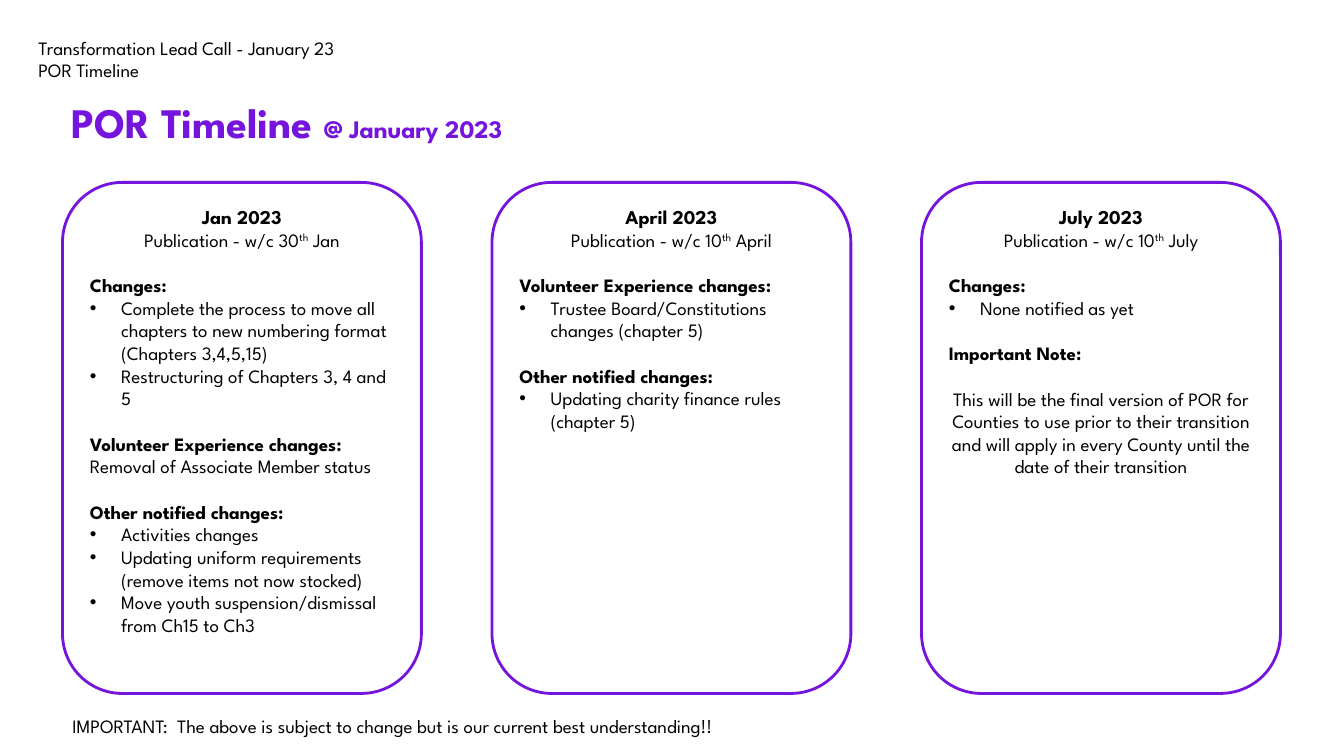
from dataclasses import dataclass

from lxml import etree
from pptx import Presentation
from pptx import util as u
from pptx.dml.color import RGBColor
from pptx.enum import shapes, text
from pptx.oxml.ns import qn


@dataclass(frozen=True)
class Theme:
    """Colours, font and type sizes of the slide."""
    font: str = "League Spartan"
    purple: RGBColor = RGBColor(0x74, 0x14, 0xDC)
    black: RGBColor = RGBColor(0, 0, 0)
    title: float = 30
    subtitle: float = 18
    heading: float = 14
    body: float = 13.5
    section_gap: float = 16.2
    outline: float = 2
    bullet_indent: float = 0.31


THEME = Theme()
SLIDE_WIDTH, SLIDE_HEIGHT = 13.33, 7.5
CARD_LEFT, CARD_TOP, CARD_PITCH = 0.62, 1.81, 4.26
CARD_WIDTH, CARD_HEIGHT = 3.56, 5.07

CARDS = [
    ("Jan 2023", "30", "Jan", [
        ("section", "Changes:"),
        ("bullet", "Complete the process to move all chapters to new numbering format (Chapters 3,4,5,15)"),
        ("bullet", "Restructuring of Chapters 3, 4 and 5"),
        ("section", "Volunteer Experience changes:"),
        ("plain", "Removal of Associate Member status"),
        ("section", "Other notified changes:"),
        ("bullet", "Activities changes"),
        ("bullet", "Updating uniform requirements (remove items not now stocked)"),
        ("bullet", "Move youth suspension/dismissal from Ch15 to Ch3"),
    ]),
    ("April 2023", "10", "April", [
        ("section", "Volunteer Experience changes:"),
        ("bullet", "Trustee Board/Constitutions changes (chapter 5)"),
        ("section", "Other notified changes:"),
        ("bullet", "Updating charity finance rules (chapter 5)"),
    ]),
    ("July 2023", "10", "July", [
        ("section", "Changes:"),
        ("bullet", "None notified as yet"),
        ("section", "Important Note:"),
        ("note", "This will be the final version of POR for Counties to use prior to their "
                 "transition and will apply in every County until the date of their transition"),
    ]),
]


def add_run(paragraph, words, size=THEME.body, bold=False, color=THEME.black, raised=False):
    """Add one styled run, optionally as superscript."""
    run = paragraph.add_run()
    run.text = words
    run.font.name = THEME.font
    run.font.size = u.Pt(size)
    run.font.bold = bold
    run.font.color.rgb = color
    if raised:
        run._r.get_or_add_rPr().set("baseline", "30000")


def add_bullet(paragraph):
    """Give a paragraph a hanging round bullet."""
    properties = paragraph._p.get_or_add_pPr()
    indent = u.Inches(THEME.bullet_indent)
    properties.set("marL", str(indent))
    properties.set("indent", str(-indent))
    etree.SubElement(properties, qn("a:buFont"), typeface="Arial")
    etree.SubElement(properties, qn("a:buChar"), char="•")


def add_line(slide, box, runs, inset=True):
    """Place a one-paragraph text box, with or without inner margins."""
    shape = slide.shapes.add_textbox(*map(u.Inches, box))
    frame = shape.text_frame
    frame.word_wrap = True
    if not inset:
        frame.margin_left = frame.margin_right = frame.margin_top = frame.margin_bottom = 0
    for words, style in runs:
        add_run(frame.paragraphs[0], words, **style)


def add_header(slide, left, top, width, height):
    """Place the two header lines in equal halves of the box."""
    for row, words in enumerate(("Transformation Lead Call - January 23", "POR Timeline")):
        box = (left, top + row * height / 2, width, height / 2)
        add_line(slide, box, [(words, {})], inset=False)


def add_card(slide, box, month, day, short_month, items):
    """Place a rounded card with its month, publication date and changes."""
    card = slide.shapes.add_shape(shapes.MSO_SHAPE.ROUNDED_RECTANGLE, *map(u.Inches, box))
    card.shadow.inherit = False
    card.fill.background()
    card.line.color.rgb = THEME.purple
    card.line.width = u.Pt(THEME.outline)
    frame = card.text_frame
    frame.word_wrap = True
    frame.vertical_anchor = text.MSO_ANCHOR.TOP

    heading = frame.paragraphs[0]
    heading.alignment = text.PP_ALIGN.CENTER
    add_run(heading, month, THEME.heading, bold=True)
    publication = frame.add_paragraph()
    publication.alignment = text.PP_ALIGN.CENTER
    add_run(publication, f"Publication - w/c {day}")
    add_run(publication, "th", raised=True)
    add_run(publication, f" {short_month}")

    for kind, words in items:
        paragraph = frame.add_paragraph()
        paragraph.alignment = text.PP_ALIGN.CENTER if kind == "note" else text.PP_ALIGN.LEFT
        if kind in ("section", "note"):
            paragraph.space_before = u.Pt(THEME.section_gap)
        if kind == "bullet":
            add_bullet(paragraph)
        add_run(paragraph, words, bold=kind == "section")


def add_timeline(slide, left, top, width, height):
    """Place the cards side by side at an equal pitch."""
    for column, card in enumerate(CARDS):
        add_card(slide, (left + column * CARD_PITCH, top, width, height), *card)


def main():
    """Build the slide and save it."""
    presentation = Presentation()
    presentation.slide_width = u.Inches(SLIDE_WIDTH)
    presentation.slide_height = u.Inches(SLIDE_HEIGHT)
    slide = presentation.slides.add_slide(presentation.slide_layouts[6])
    title_style = {"bold": True, "color": THEME.purple}
    add_line(slide, (0.61, 0.91, 7.27, 0.61), [
        ("POR Timeline ", {"size": THEME.title, **title_style}),
        ("@ January 2023", {"size": THEME.subtitle, **title_style}),
    ])
    add_timeline(slide, CARD_LEFT, CARD_TOP, CARD_WIDTH, CARD_HEIGHT)
    add_line(slide, (CARD_LEFT, 7.04, 7.71, 0.33), [
        ("IMPORTANT:  The above is subject to change but is our current best understanding!!", {}),
    ])
    add_header(slide, 0.38, 0.36, 6.29, 0.45)
    presentation.save("out.pptx")


if __name__ == "__main__":
    main()
